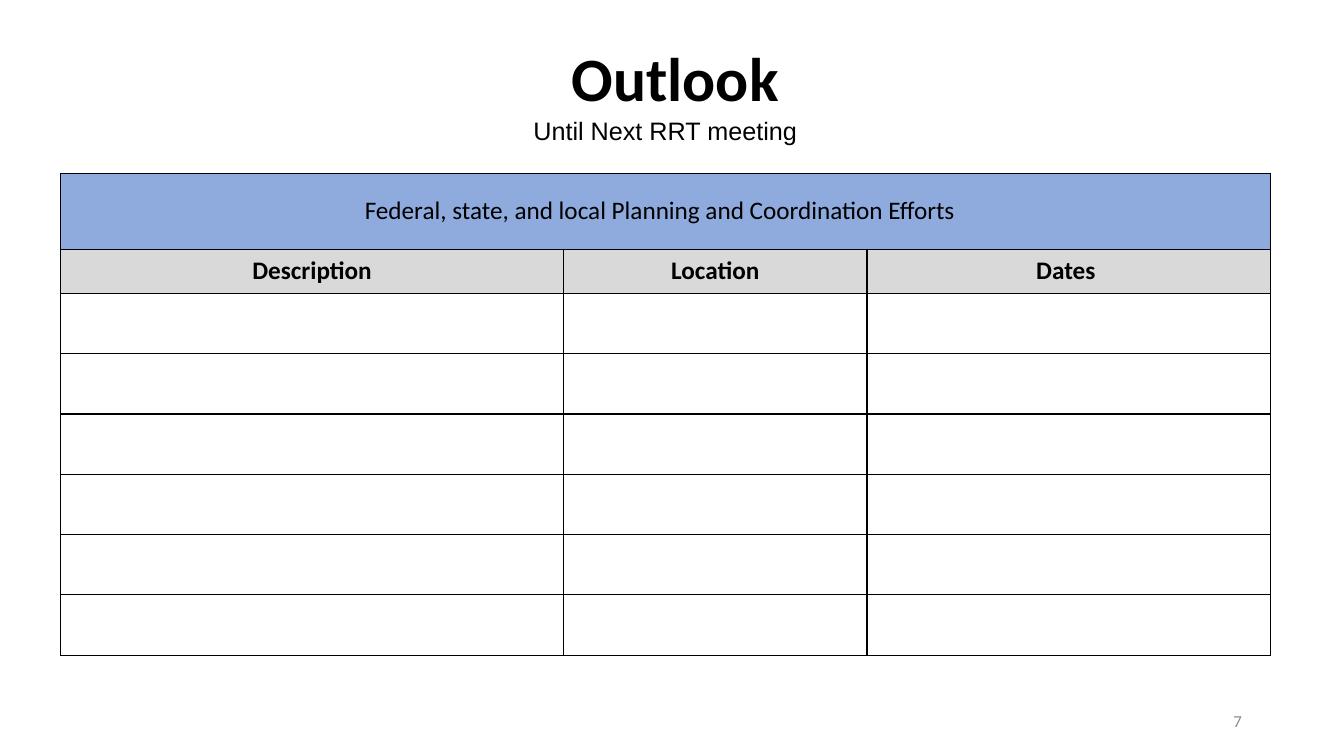
from dataclasses import dataclass

import lxml.etree
import pptx
import pptx.dml.color
import pptx.enum.shapes
import pptx.enum.text
import pptx.oxml.ns
import pptx.util
from pptx.util import Cm, Pt

COLORS = {
    "black": "000000",
    "white": "FFFFFF",
    "banner": "8FAADC",
    "header": "D9D9D9",
    "page_number": "8C8C8C",
}
COLUMN_WIDTHS = (12.67, 7.65, 10.16)
BANNER_HEIGHT, HEADER_HEIGHT, ENTRY_HEIGHT = 1.91, 1.11, 1.52
ENTRY_ROWS = 6


@dataclass(frozen=True)
class Label:
    text: str
    size: float = 18
    font: str = "Calibri"
    color: str = "black"
    bold: bool = False
    align: pptx.enum.text.PP_ALIGN = pptx.enum.text.PP_ALIGN.CENTER


@dataclass(frozen=True)
class HeadingCell:
    """A filled table cell; right_inset offsets its centred text."""
    row: int
    column: int
    label: Label
    fill: str
    right_inset: float = 0.18


HEADING_CELLS = (
    HeadingCell(0, 0, Label("Federal, state, and local Planning and Coordination Efforts"),
                "banner", 0.46),
    HeadingCell(1, 0, Label("Description", bold=True), "header"),
    HeadingCell(1, 1, Label("Location", bold=True), "header"),
    HeadingCell(1, 2, Label("Dates", bold=True), "header", 0.32),
)


def rgb(name: str) -> pptx.dml.color.RGBColor:
    return pptx.dml.color.RGBColor.from_string(COLORS[name])


def write(text_frame, label: Label) -> None:
    text_frame.text = label.text
    paragraph = text_frame.paragraphs[0]
    paragraph.alignment = label.align
    paragraph.font.name = label.font
    paragraph.font.size = Pt(label.size)
    paragraph.font.bold = label.bold
    paragraph.font.color.rgb = rgb(label.color)


def fill_cell(cell, color: str) -> None:
    cell.fill.solid()
    cell.fill.fore_color.rgb = rgb(color)


def add_borders(cell) -> None:
    """Put a 1 pt black line on each side, ahead of the fill in the cell properties."""
    properties = cell._tc.get_or_add_tcPr()
    qn = pptx.oxml.ns.qn
    for position, side in enumerate(("lnL", "lnR", "lnT", "lnB")):
        line = lxml.etree.Element(qn(f"a:{side}"), w=str(Pt(1)))
        solid = lxml.etree.SubElement(line, qn("a:solidFill"))
        lxml.etree.SubElement(solid, qn("a:srgbClr"), val=COLORS["black"])
        properties.insert(position, line)


def add_title(slide) -> None:
    title = slide.shapes.title
    title.left, title.top, title.width, title.height = Cm(1.78), Cm(0.89), Cm(30.48), Cm(2.34)
    title.text_frame.vertical_anchor = pptx.enum.text.MSO_ANCHOR.MIDDLE
    write(title.text_frame, Label("Outlook", size=44, bold=True))
    title.text_frame.paragraphs[0].line_spacing = 0.9


def add_subtitle(slide) -> None:
    subtitle = slide.shapes.add_shape(pptx.enum.shapes.MSO_SHAPE.RECTANGLE,
                                      Cm(13.16), Cm(2.77), Cm(7.21), Cm(1.02))
    subtitle.shadow.inherit = False
    subtitle.fill.solid()
    subtitle.fill.fore_color.rgb = rgb("white")
    subtitle.line.color.rgb = rgb("white")
    subtitle.line.width = Pt(1)
    subtitle.text_frame.word_wrap = False
    subtitle.text_frame.vertical_anchor = pptx.enum.text.MSO_ANCHOR.TOP
    write(subtitle.text_frame, Label("Until Next RRT meeting", font="Arial"))


def add_outlook_table(slide) -> None:
    heights = (BANNER_HEIGHT, HEADER_HEIGHT) + (ENTRY_HEIGHT,) * ENTRY_ROWS
    table = slide.shapes.add_table(len(heights), len(COLUMN_WIDTHS), Cm(1.53), Cm(4.37),
                                   Cm(sum(COLUMN_WIDTHS)), Cm(sum(heights))).table
    table.first_row = False
    table.horz_banding = False
    for column, width in zip(table.columns, COLUMN_WIDTHS):
        column.width = Cm(width)
    for row, height in zip(table.rows, heights):
        row.height = Cm(height)
    for cell in table.iter_cells():
        fill_cell(cell, "white")
        add_borders(cell)
    table.cell(0, 0).merge(table.cell(0, len(COLUMN_WIDTHS) - 1))

    for heading in HEADING_CELLS:
        cell = table.cell(heading.row, heading.column)
        fill_cell(cell, heading.fill)
        cell.vertical_anchor = pptx.enum.text.MSO_ANCHOR.MIDDLE
        cell.margin_left, cell.margin_right = Cm(0.18), Cm(heading.right_inset)
        cell.margin_top = cell.margin_bottom = Cm(0.1)
        write(cell.text_frame, heading.label)


def add_page_number(slide) -> None:
    box = slide.shapes.add_textbox(Cm(23.93), Cm(17.65), Cm(7.62), Cm(1.02))
    box.text_frame.word_wrap = True
    box.text_frame.vertical_anchor = pptx.enum.text.MSO_ANCHOR.MIDDLE
    write(box.text_frame, Label("7", size=12, color="page_number",
                                align=pptx.enum.text.PP_ALIGN.RIGHT))


def main() -> None:
    presentation = pptx.Presentation()
    presentation.slide_width, presentation.slide_height = Cm(33.87), Cm(19.05)
    slide = presentation.slides.add_slide(presentation.slide_layouts.get_by_name("Title Only"))
    add_page_number(slide)
    add_outlook_table(slide)
    add_title(slide)
    add_subtitle(slide)
    presentation.save("out.pptx")


if __name__ == "__main__":
    main()
